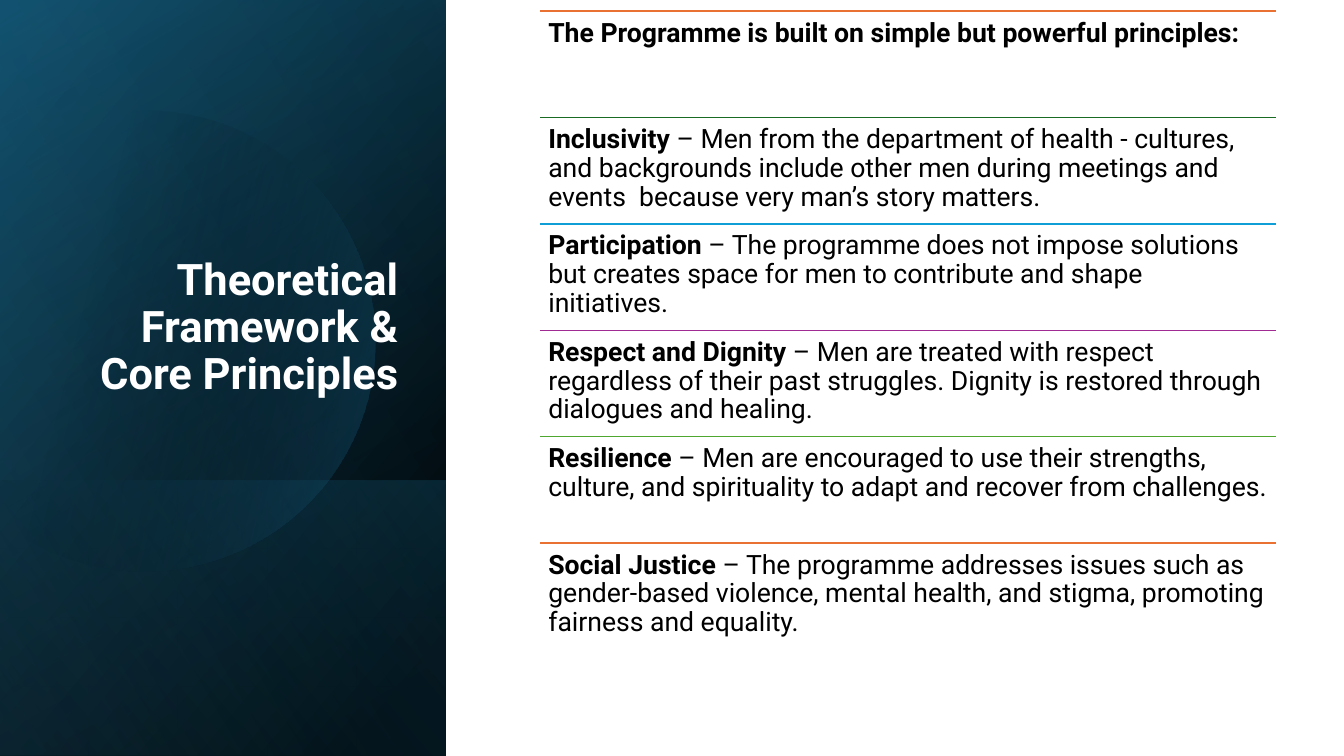
from lxml import etree
from pptx import Presentation
from pptx.dml.color import RGBColor
from pptx.enum.shapes import MSO_CONNECTOR, MSO_SHAPE
from pptx.enum.text import MSO_ANCHOR, PP_ALIGN
from pptx.oxml.ns import qn
from pptx.util import Pt

RECTANGLE = MSO_SHAPE.RECTANGLE
STRAIGHT = MSO_CONNECTOR.STRAIGHT
TOP, BOTTOM = MSO_ANCHOR.TOP, MSO_ANCHOR.BOTTOM
LEFT, RIGHT = PP_ALIGN.LEFT, PP_ALIGN.RIGHT

FONT = "Roboto"
TITLE = "Theoretical Framework & Core Principles"
PRINCIPLES = [
    ("E97132", "The Programme is built on simple but powerful principles:", ""),
    ("196B24", "Inclusivity", " – Men from the department of health - cultures, and backgrounds include "
     "other men during meetings and events  because very man’s story matters."),
    ("0F9ED5", "Participation", " – The programme does not impose solutions but creates space for men "
     "to contribute and shape initiatives."),
    ("A02B93", "Respect and Dignity", " – Men are treated with respect regardless of their past "
     "struggles. Dignity is restored through dialogues and healing."),
    ("4EA72E", "Resilience", " – Men are encouraged to use their strengths, culture, and spirituality "
     "to adapt and recover from challenges."),
    ("E97132", "Social Justice", " – The programme addresses issues such as gender-based violence, "
     "mental health, and stigma, promoting fairness and equality."),
]

PAGE_WIDTH, PAGE_HEIGHT = 960, 540
PANEL_WIDTH = 318.5
LOW_BAND_HEIGHT = 197
BASE_LAYER = (PAGE_HEIGHT, 50, [(8, "000000", 100), (100, "104862", 100)])
TINT_LAYER = (PAGE_HEIGHT, 30, [(0, "000000", 0), (99, "156082", 46)])
LOW_BAND = (LOW_BAND_HEIGHT, 130, [(2, "156082", 29), (100, "000000", 30)])
GLOW_LAYER = (PAGE_HEIGHT, 120, [(0, "000000", 0), (99, "46B1E1", 11)])

DISC_ANGLE = 14
DISC_STOPS = [(29, "000000", 0), (100, "156082", 43)]
DISC_START = (107.3, 79.2)
DISC_CURVES = [
    [(177.1, 80.6), (241.2, 127.4), (261.4, 198)],
    [(286.6, 285.8), (236.2, 376.6), (149, 401.8)],
    [(94.3, 417.6), (38.2, 403.9), (-2.2, 370.1)],
    [(-10.8, 362.2)],
    [(-10.8, 126)],
    [(0, 115.9)],
    [(16.6, 102.2), (36, 92.2), (57.6, 85.7)],
    [(74.2, 81.4), (90.7, 79.2), DISC_START],
]
CURVE_STEPS = 24

ROW_LEFT, ROW_TOP, ROW_WIDTH, ROW_HEIGHT = 386, 8, 525.2, 76
ROW_INSET = 5.7


def color(value):
    return RGBColor.from_string(value)


def fill_gradient(shape, angle, stops):
    shape.shadow.inherit = False
    shape.fill.gradient()
    shape.fill.gradient_angle = 360 - angle
    for stop, (position, value, opacity) in zip(shape.fill.gradient_stops, stops):
        stop.position = position / 100
        stop.color.rgb = color(value)
    for tone, (position, value, opacity) in zip(shape._element.spPr.iter(qn("a:srgbClr")), stops):
        if opacity < 100:
            etree.SubElement(tone, qn("a:alpha")).set("val", str(opacity * 1000))
    shape.line.fill.background()


def add_layer(page, height, angle, stops):
    left = (PANEL_WIDTH - height) / 2
    top = PAGE_HEIGHT - (height + PANEL_WIDTH) / 2
    layer = page.shapes.add_shape(RECTANGLE, Pt(left), Pt(top), Pt(height), Pt(PANEL_WIDTH))
    layer.rotation = 90
    layer._element.spPr.find(qn("a:xfrm")).set("flipH", "1")
    fill_gradient(layer, angle, stops)


def curve_point(corners, share):
    while len(corners) > 1:
        corners = [tuple(a + (b - a) * share for a, b in zip(start, end))
                   for start, end in zip(corners, corners[1:])]
    return corners[0]


def add_disc(page):
    points, current = [], DISC_START
    for curve in DISC_CURVES:
        steps = CURVE_STEPS if len(curve) > 1 else 1
        points += [curve_point([current, *curve], step / steps) for step in range(1, steps + 1)]
        current = curve[-1]
    builder = page.shapes.build_freeform(*map(Pt, DISC_START))
    builder.add_line_segments([(Pt(x), Pt(y)) for x, y in points], close=True)
    fill_gradient(builder.convert_to_shape(), DISC_ANGLE, DISC_STOPS)


def write(box, spans, size, value, align, anchor, insets):
    frame = box.text_frame
    frame.word_wrap = True
    frame.vertical_anchor = anchor
    frame.margin_left, frame.margin_top, frame.margin_right, frame.margin_bottom = map(Pt, insets)
    para = frame.paragraphs[0]
    para.alignment = align
    para.line_spacing = 0.9
    for text, bold in spans:
        if text:
            span = para.add_run()
            span.text = text
            span.font.name = FONT
            span.font.size = Pt(size)
            span.font.bold = bold
            span.font.color.rgb = color(value)


def add_title(page):
    title = page.shapes.title
    title.left, title.top, title.width, title.height = Pt(46), Pt(132.5), Pt(245.5), Pt(188.5)
    write(title, [(TITLE, True)], 31, "FFFFFF", RIGHT, BOTTOM, (7.2, 3.6, 7.2, 36.3))
    tree = page.shapes._spTree
    tree.remove(title._element)
    tree.append(title._element)


def add_principle(page, index, value, name, detail):
    top = ROW_TOP + index * ROW_HEIGHT
    rule = page.shapes.add_connector(STRAIGHT, Pt(ROW_LEFT), Pt(top), Pt(ROW_LEFT + ROW_WIDTH), Pt(top))
    rule.line.color.rgb = color(value)
    rule.line.width = Pt(1)
    etree.SubElement(rule._element.spPr, qn("a:effectLst"))
    box = page.shapes.add_textbox(Pt(ROW_LEFT), Pt(top), Pt(ROW_WIDTH), Pt(ROW_HEIGHT))
    write(box, [(name, True), (detail, False)], 19, "000000", LEFT, TOP, [ROW_INSET] * 4)


def main():
    deck = Presentation()
    deck.slide_width, deck.slide_height = Pt(PAGE_WIDTH), Pt(PAGE_HEIGHT)
    page = deck.slides.add_slide(deck.slide_layouts[5])
    for layer in (BASE_LAYER, TINT_LAYER, LOW_BAND):
        add_layer(page, *layer)
    add_disc(page)
    add_layer(page, *GLOW_LAYER)
    add_title(page)
    for index, principle in enumerate(PRINCIPLES):
        add_principle(page, index, *principle)
    deck.save("out.pptx")


if __name__ == "__main__":
    main()
